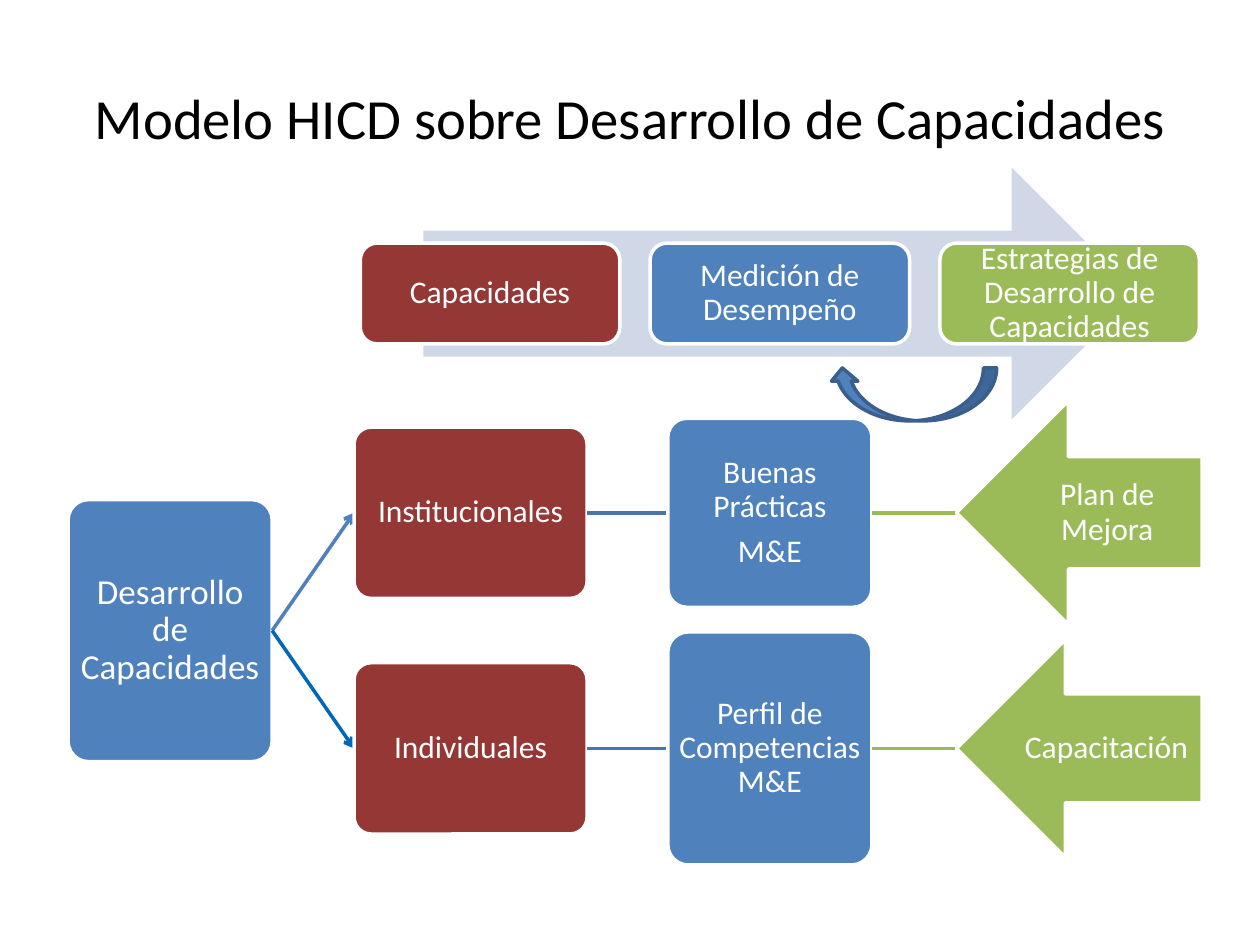
from dataclasses import dataclass

from lxml import etree
from pptx import Presentation
from pptx import util as u
from pptx.dml.color import RGBColor
from pptx.enum import shapes, text
from pptx.oxml.ns import qn


@dataclass(frozen=True)
class Theme:
    font: str = "Calibri"
    black: str = "000000"
    white: str = "FFFFFF"
    blue: str = "4F81BD"
    deep: str = "0067B9"
    steel: str = "4875AC"
    edge: str = "3A5F8C"
    red: str = "953735"
    green: str = "9BBB59"
    pale: str = "D0D8E8"
    title: float = 32.4
    root: int = 20
    body: int = 18
    line: int = 2


T = Theme()
KIND = shapes.MSO_SHAPE
WIDE, HIGH = 10, 7.5
# Left edge and width of each tree column; middle of each tree row
COLS = [(0.54, 1.62), (2.81, 1.85), (5.3, 1.62), (7.59, 1.95)]
ROWS = [4.07, 5.94]
MID = sum(ROWS) / 2
# Strip of step cards along the top
LEFT, STEP, CARD_W, CARD_H, STRIP = 2.86, 2.3, 2.06, 0.8, 2.33


def rgb(code):
    return RGBColor.from_string(code)


def write(shape, paras, size, color=T.white, pad=0.01, lead=0.9):
    frame = shape.text_frame
    frame.word_wrap = True
    frame.vertical_anchor = text.MSO_ANCHOR.MIDDLE
    frame.margin_left = frame.margin_right = u.Inches(pad)
    frame.margin_top = frame.margin_bottom = u.Inches(pad)
    for i, words in enumerate(paras):
        para = frame.add_paragraph() if i else frame.paragraphs[0]
        para.alignment = text.PP_ALIGN.CENTER
        para.line_spacing = lead
        para.space_after = u.Pt(round(size * 0.35, 1))
        run = para.add_run()
        run.text = words
        run.font.name = T.font
        run.font.size = u.Pt(size)
        run.font.color.rgb = rgb(color)


def draw(slide, kind, box, fill, line=T.white):
    shape = slide.shapes.add_shape(kind, *map(u.Inches, box))
    shape.shadow.inherit = False
    shape.fill.solid()
    shape.fill.fore_color.rgb = rgb(fill)
    if line:
        shape.line.color.rgb = rgb(line)
        shape.line.width = u.Pt(T.line)
    else:
        shape.line.fill.background()
    return shape


def node(slide, col, mid, high, fill, paras, size=T.body, kind=KIND.ROUNDED_RECTANGLE):
    """Tree node in a column, centred on the height mid."""
    left, wide = COLS[col]
    shape = draw(slide, kind, (left, mid - high / 2, wide, high), fill)
    if kind == KIND.ROUNDED_RECTANGLE:
        shape.adjustments[0] = 0.1
    write(shape, paras, size)


def link(slide, col, start, end, color, arrow=False):
    """Line from the right edge of a column to the next column."""
    left, wide = COLS[col]
    ends = (left + wide, start, COLS[col + 1][0], end)
    line = slide.shapes.add_connector(shapes.MSO_CONNECTOR.STRAIGHT, *map(u.Inches, ends))
    line.line.color.rgb = rgb(color)
    line.line.width = u.Pt(T.line)
    if arrow:
        etree.SubElement(line.line._get_or_add_ln(), qn("a:tailEnd"), type="arrow")
    etree.SubElement(line._element.spPr, qn("a:effectLst"))


def title(slide, words):
    box = (WIDE * 0.05, HIGH * 0.04, WIDE * 0.9, HIGH / 6)
    shape = slide.shapes.add_textbox(*map(u.Inches, box))
    write(shape, [words], T.title, T.black, pad=0.05, lead=1)


def tree(slide):
    node(slide, 0, MID, 2.08, T.blue, ["Desarrollo de Capacidades"], T.root)
    rows = [
        (T.blue, "Institucionales", ["Buenas Prácticas", "M&E"], 1.5, "Plan de Mejora", 1.78),
        (T.deep, "Individuales", ["Perfil de Competencias M&E"], 1.85, "Capacitación", 1.73),
    ]
    for mid, (color, level, tools, high, plan, head) in zip(ROWS, rows):
        link(slide, 0, MID, mid, color, arrow=True)
        node(slide, 1, mid, 1.36, T.red, [level])
        link(slide, 1, mid, mid, T.steel)
        node(slide, 2, mid, high, T.blue, tools)
        link(slide, 2, mid, mid, T.green)
        node(slide, 3, mid, head, T.green, [plan], kind=KIND.LEFT_ARROW)


def strip(slide):
    draw(slide, KIND.RIGHT_ARROW, (3.36, STRIP - 1, 5.67, 2), T.pale, line=None)
    cards = [
        (T.red, "Capacidades"),
        (T.blue, "Medición de Desempeño"),
        (T.green, "Estrategias de Desarrollo de Capacidades"),
    ]
    for i, (fill, words) in enumerate(cards):
        box = (LEFT + i * STEP, STRIP - CARD_H / 2, CARD_W, CARD_H)
        write(draw(slide, KIND.ROUNDED_RECTANGLE, box, fill), [words], T.body, pad=0.07)


def main():
    deck = Presentation()
    deck.slide_width, deck.slide_height = u.Inches(WIDE), u.Inches(HIGH)
    slide = deck.slides.add_slide(deck.slide_layouts[6])
    title(slide, "Modelo HICD sobre Desarrollo de Capacidades")
    tree(slide)
    strip(slide)
    loop = draw(slide, KIND.CURVED_DOWN_ARROW, (6.58, 2.92, 1.33, 0.42), T.blue, T.edge)
    loop.rotation = 180
    deck.save("out.pptx")


if __name__ == "__main__":
    main()
